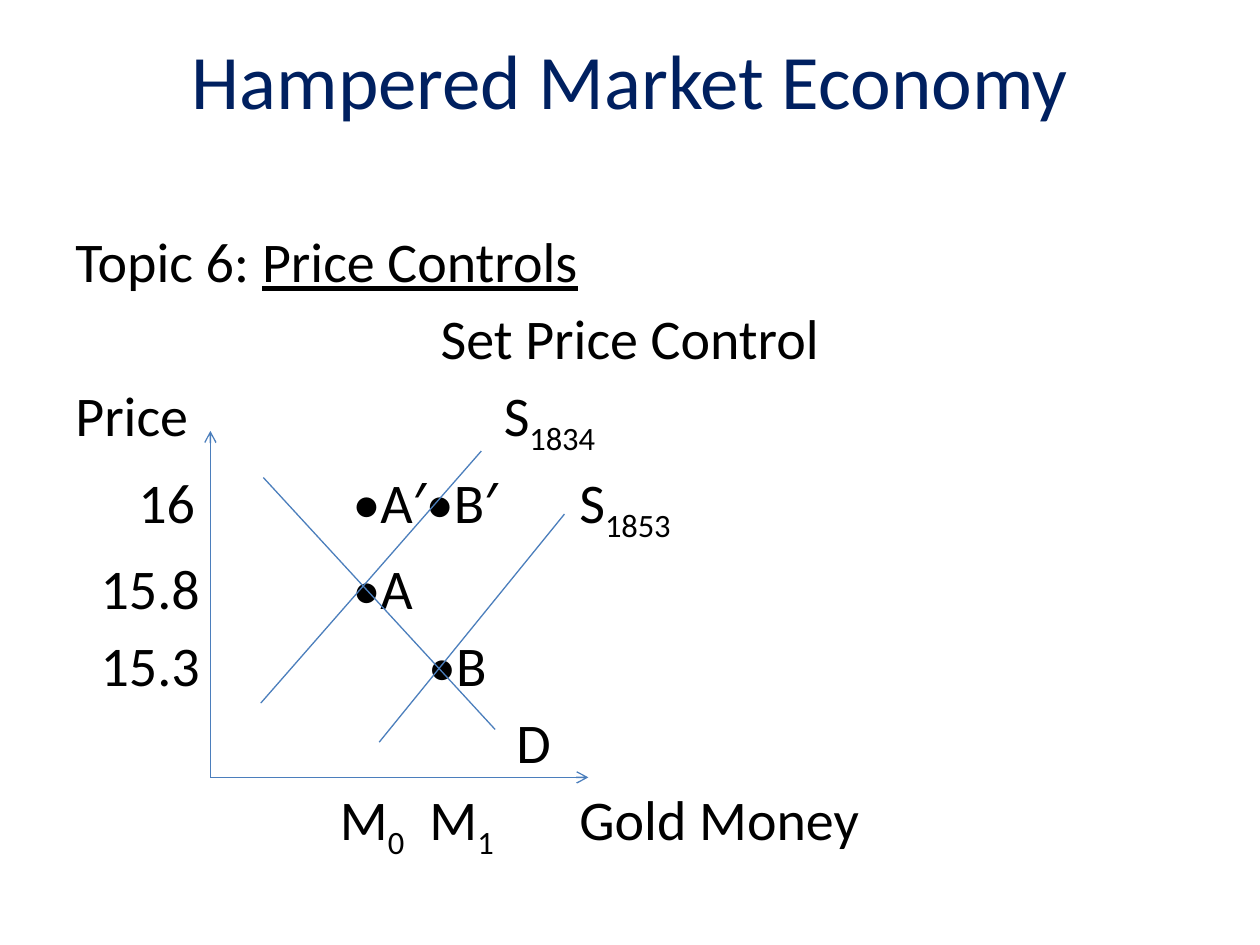
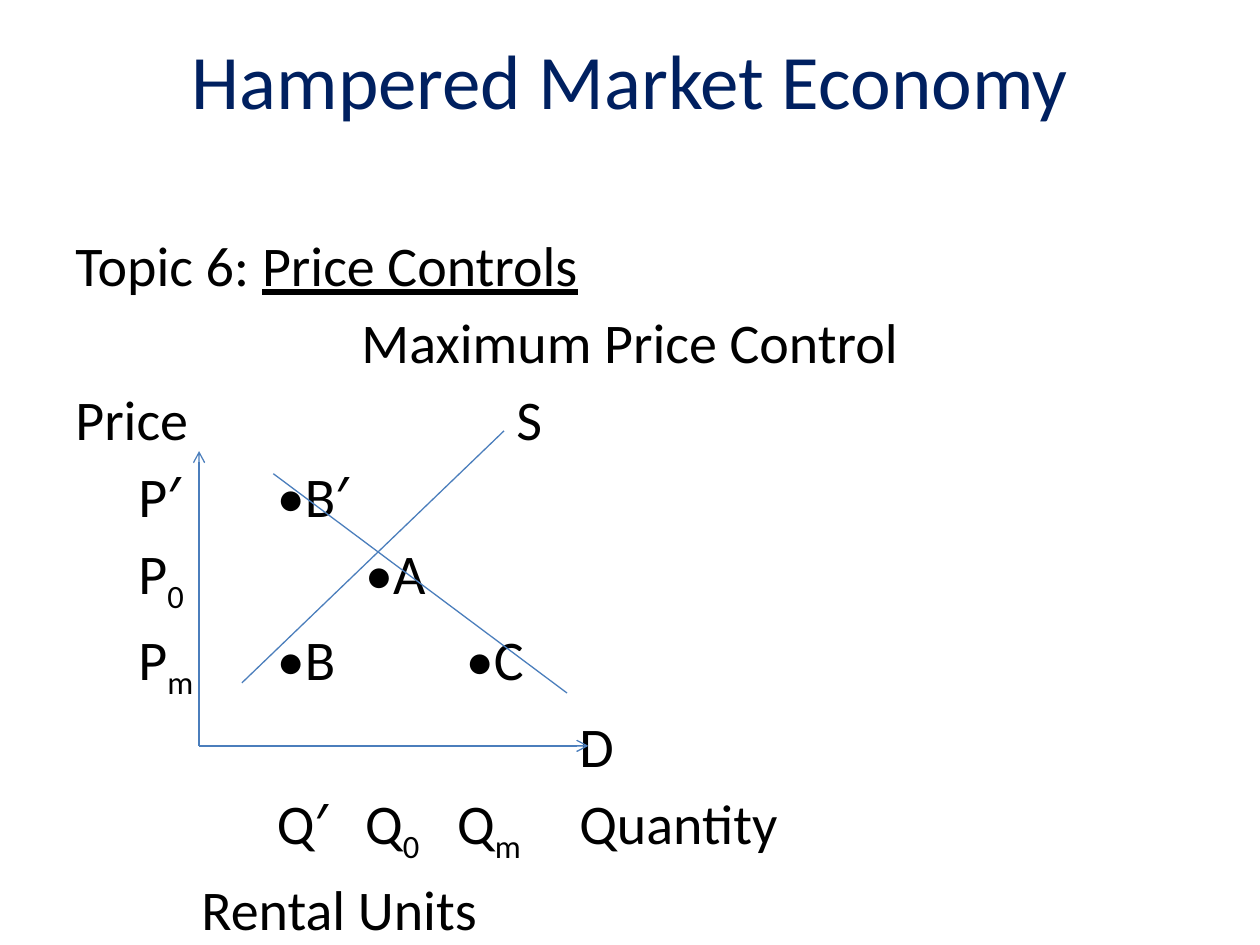
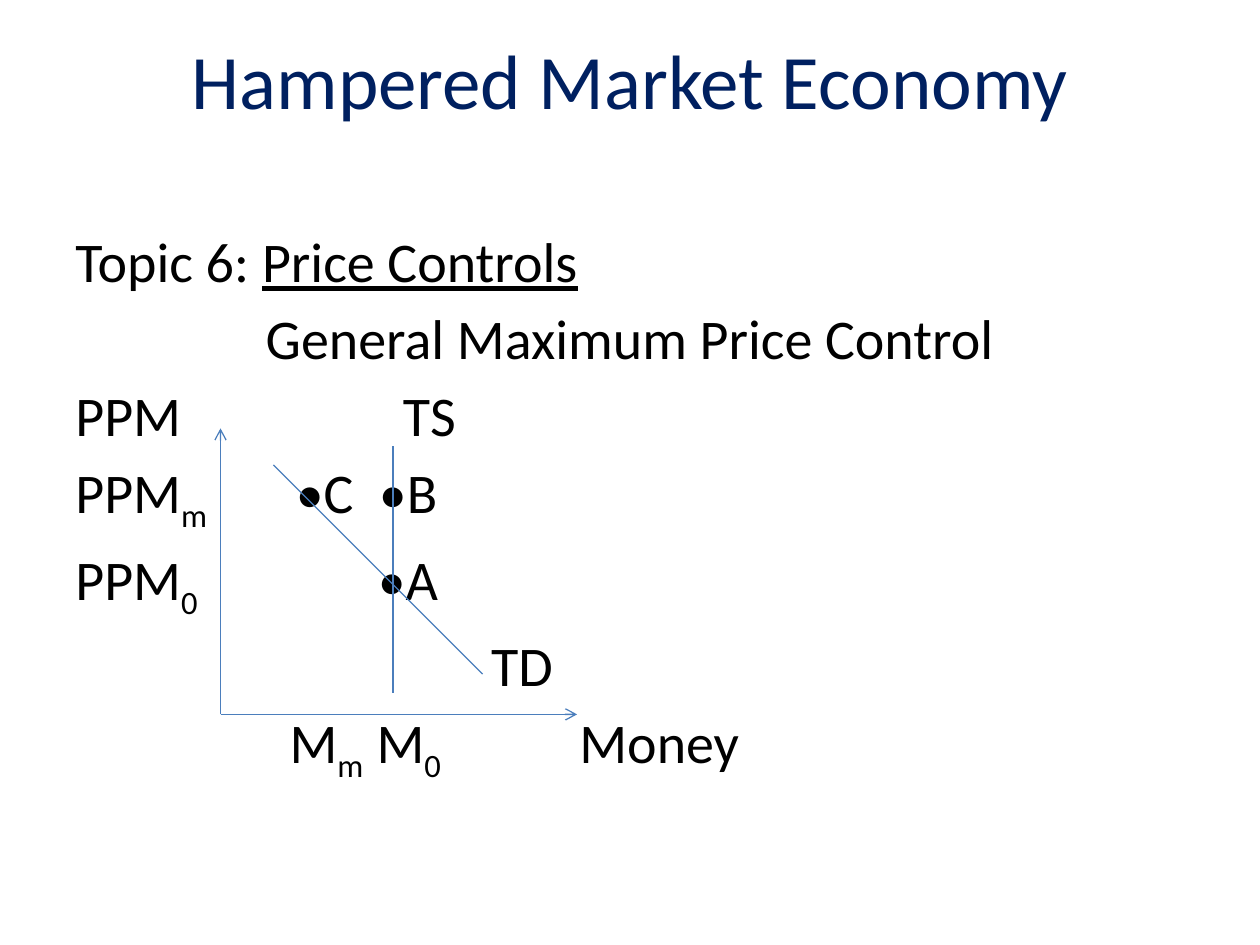
from dataclasses import dataclass

import lxml.etree
import pptx
import pptx.dml.color
import pptx.enum.shapes
import pptx.enum.text
import pptx.oxml.ns
import pptx.util
from pptx.util import Inches


@dataclass(frozen=True)
class Theme:
    font: str = "Calibri"
    title_size: int = 44
    body_size: int = 32
    space_before: float = 5.6
    line_width: float = 0.75
    title_color: str = "002060"
    body_color: str = "000000"
    line_color: str = "4B7EBC"


@dataclass(frozen=True)
class Label:
    offset: float
    text: str
    subscript: str = ""


@dataclass(frozen=True)
class Curve:
    start: tuple[float, float]
    end: tuple[float, float]


@dataclass(frozen=True)
class Diagram:
    heading: str
    body_top: float
    body_height: float
    rows: list[list[Label]]
    origin: tuple[float, float]
    price_axis_top: float
    quantity_axis_right: float
    curves: list[Curve]


THEME = Theme()
TITLE = "Hampered Market Economy"
TOPIC = "Topic 6: "
TOPIC_NAME = "Price Controls"

DIAGRAMS = [
    Diagram(
        heading="Set Price Control",
        body_top=1.75,
        body_height=5.75,
        rows=[
            [Label(0, "Price"), Label(3.4, "S", "1834")],
            [Label(0.5, "16"), Label(2.2, "•A′•B′"), Label(4, "S", "1853")],
            [Label(0.2, "15.8"), Label(2.2, "•A")],
            [Label(0.2, "15.3"), Label(2.8, "•B")],
            [Label(3.5, "D")],
            [Label(2.1, "M", "0"), Label(2.81, "M", "1"), Label(4, "Gold Money")],
        ],
        origin=(1.67, 6.17),
        price_axis_top=3.42,
        quantity_axis_right=4.67,
        curves=[
            Curve((2.09, 3.79), (3.93, 5.79)),
            Curve((2.07, 5.58), (3.82, 3.58)),
            Curve((3.01, 5.89), (4.48, 4.08)),
        ],
    ),
    Diagram(
        heading="Maximum Price Control",
        body_top=1.78,
        body_height=5.75,
        rows=[
            [Label(0, "Price"), Label(3.5, "S")],
            [Label(0.5, "P′"), Label(1.6, "•B′")],
            [Label(0.5, "P", "0"), Label(2.3, "•A")],
            [Label(0.5, "P", "m"), Label(1.6, "•B"), Label(3.1, "•C")],
            [Label(4, "D")],
            [Label(1.6, "Q′"), Label(2.3, "Q", "0"), Label(3.03, "Q", "m"),
             Label(4, "Quantity")],
            [Label(1, "Rental Units")],
        ],
        origin=(1.58, 5.92),
        price_axis_top=3.58,
        quantity_axis_right=4.67,
        curves=[
            Curve((2.17, 3.76), (4.5, 5.5)),
            Curve((1.92, 5.42), (4, 3.42)),
        ],
    ),
    Diagram(
        heading="General Maximum Price Control",
        body_top=1.75,
        body_height=4.95,
        rows=[
            [Label(0, "PPM"), Label(2.6, "TS")],
            [Label(0, "PPM", "m"), Label(1.75, "•C"), Label(2.41, "•B")],
            [Label(0, "PPM", "0"), Label(2.4, "•A")],
            [Label(3.3, "TD")],
            [Label(1.7, "M", "m"), Label(2.39, "M", "0"), Label(4, "Money")],
        ],
        origin=(1.75, 5.67),
        price_axis_top=3.4,
        quantity_axis_right=4.58,
        curves=[
            Curve((3.12, 3.54), (3.12, 5.5)),
            Curve((2.17, 3.69), (3.83, 5.35)),
        ],
    ),
]


def format_run(run, size: int, color: str) -> None:
    run.font.name = THEME.font
    run.font.size = pptx.util.Pt(size)
    run.font.color.rgb = pptx.dml.color.RGBColor.from_string(color)


def add_body_run(paragraph, text: str):
    run = paragraph.add_run()
    run.text = text
    format_run(run, THEME.body_size, THEME.body_color)
    return run


def set_tab_stops(paragraph, offsets: list[float]) -> None:
    properties = paragraph._p.get_or_add_pPr()
    tab_list = lxml.etree.SubElement(properties, pptx.oxml.ns.qn("a:tabLst"))
    for offset in offsets:
        lxml.etree.SubElement(tab_list, pptx.oxml.ns.qn("a:tab"),
                              pos=str(Inches(offset)), algn="l")


def write_row(paragraph, labels: list[Label]) -> None:
    set_tab_stops(paragraph, [label.offset for label in labels if label.offset])
    for label in labels:
        add_body_run(paragraph, ("\t" if label.offset else "") + label.text)
        if label.subscript:
            subscript = add_body_run(paragraph, label.subscript)
            subscript._r.get_or_add_rPr().set("baseline", "-25000")


def write_title(slide) -> None:
    title = slide.shapes.title
    title.left, title.top = Inches(0), Inches(0)
    title.width, title.height = Inches(10), Inches(1.25)
    title.text_frame.text = TITLE
    title.text_frame.vertical_anchor = pptx.enum.text.MSO_ANCHOR.MIDDLE
    paragraph = title.text_frame.paragraphs[0]
    paragraph.alignment = pptx.enum.text.PP_ALIGN.CENTER
    format_run(paragraph.runs[0], THEME.title_size, THEME.title_color)


def write_body(slide, diagram: Diagram) -> None:
    body = slide.shapes.add_textbox(Inches(0.5), Inches(diagram.body_top),
                                    Inches(9), Inches(diagram.body_height))
    text_frame = body.text_frame
    text_frame.word_wrap = True

    topic = text_frame.paragraphs[0]
    add_body_run(topic, TOPIC)
    add_body_run(topic, TOPIC_NAME).font.underline = True

    heading = text_frame.add_paragraph()
    heading.alignment = pptx.enum.text.PP_ALIGN.CENTER
    add_body_run(heading, diagram.heading)

    rows = [text_frame.add_paragraph() for _ in diagram.rows]
    for paragraph in text_frame.paragraphs:
        paragraph.space_before = pptx.util.Pt(THEME.space_before)
    for paragraph, labels in zip(rows, diagram.rows):
        write_row(paragraph, labels)


def draw_line(slide, curve: Curve, arrow: bool = False) -> None:
    connector = slide.shapes.add_connector(
        pptx.enum.shapes.MSO_CONNECTOR.STRAIGHT,
        *(Inches(value) for value in curve.start + curve.end))
    connector.line.color.rgb = pptx.dml.color.RGBColor.from_string(THEME.line_color)
    connector.line.width = pptx.util.Pt(THEME.line_width)
    properties = connector._element.spPr
    if arrow:
        lxml.etree.SubElement(properties.find(pptx.oxml.ns.qn("a:ln")),
                              pptx.oxml.ns.qn("a:tailEnd"), type="arrow")
    lxml.etree.SubElement(properties, pptx.oxml.ns.qn("a:effectLst"))


def draw_diagram(slide, diagram: Diagram) -> None:
    origin_x, origin_y = diagram.origin
    for axis_end in ((origin_x, diagram.price_axis_top),
                     (diagram.quantity_axis_right, origin_y)):
        draw_line(slide, Curve(diagram.origin, axis_end), arrow=True)
    for curve in diagram.curves:
        draw_line(slide, curve)


def main() -> None:
    presentation = pptx.Presentation()
    presentation.slide_width = Inches(10)
    presentation.slide_height = Inches(7.5)
    title_only = presentation.slide_layouts.get_by_name("Title Only")
    for diagram in DIAGRAMS:
        slide = presentation.slides.add_slide(title_only)
        write_title(slide)
        write_body(slide, diagram)
        draw_diagram(slide, diagram)
    presentation.save("out.pptx")


if __name__ == "__main__":
    main()
